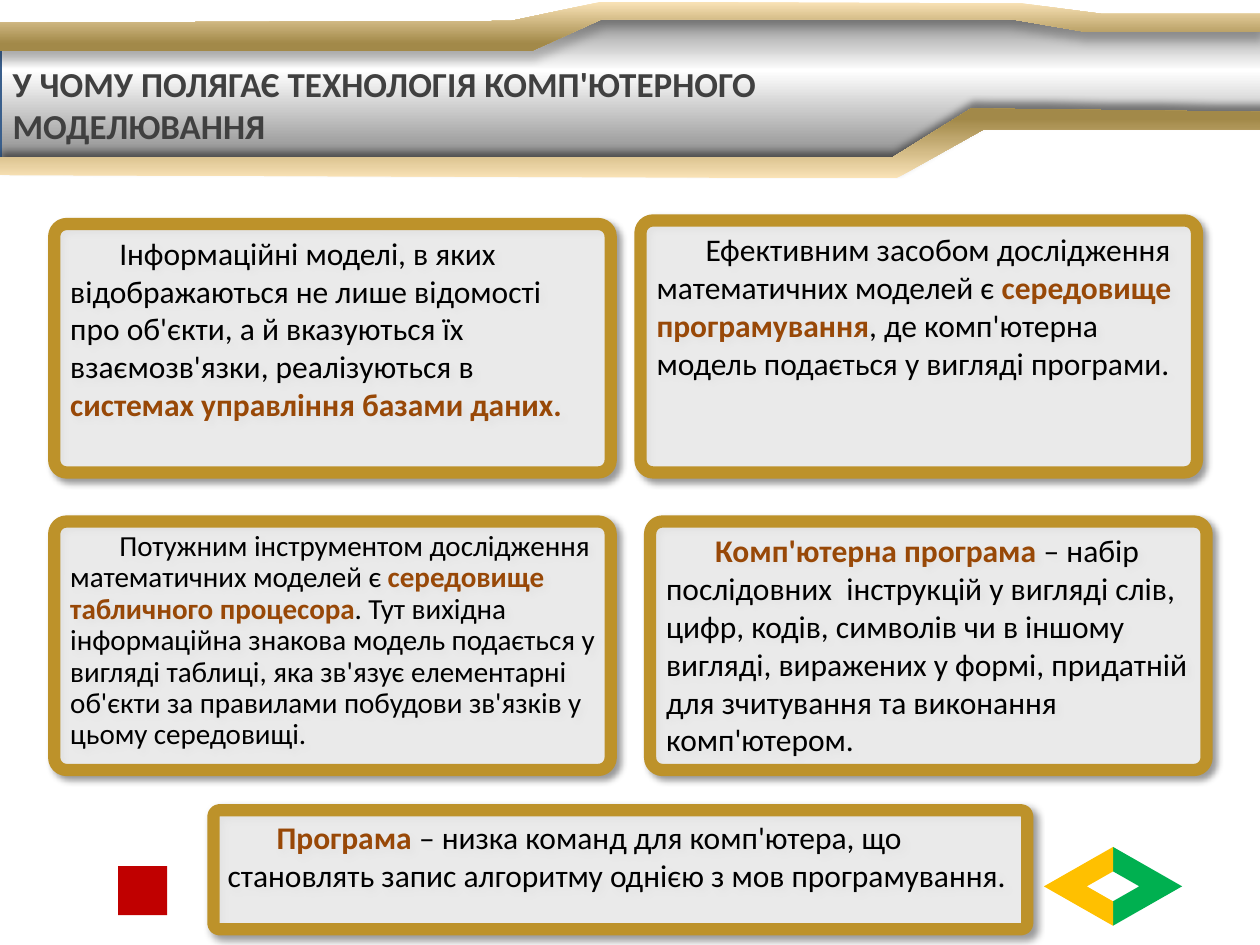
from pptx import Presentation
from pptx.dml.color import RGBColor
from pptx.enum import shapes, text
from pptx.oxml import parse_xml
from pptx.oxml.ns import nsdecls, qn
from pptx.util import Pt

COLORS = {
    "title": "404040", "body": "000000", "accent": "984807",
    "card": "FFFFFF", "border": "BD922A", "outline": "3A5F8C",
    "steel": "7F7F7F", "shine": "FFFFFF", "cream": "FAE3B7", "gold": "A28949",
    "green": "00B050", "amber": "FFC000", "red": "C00000",
}
RGB = {name: RGBColor.from_string(value) for name, value in COLORS.items()}


def write(tf, runs, size=18, indent=0, spacing=None, anchor=text.MSO_ANCHOR.TOP):
    """Fill a frame with one paragraph of (text, colour name, bold) runs."""
    tf.word_wrap = True
    tf.auto_size = text.MSO_AUTO_SIZE.NONE
    tf.vertical_anchor = anchor
    p = tf.paragraphs[0]
    p.alignment = text.PP_ALIGN.LEFT
    p.space_before = Pt(0)
    if spacing:
        p.line_spacing = spacing
    p._p.get_or_add_pPr().set("indent", str(Pt(indent)))
    for content, color, bold in runs:
        r = p.add_run()
        r.text = content
        r.font.name = "Calibri"
        r.font.size = Pt(size)
        r.font.bold = bold
        r.font.color.rgb = RGB[color]


def add_shadow(shape, alpha, blur, distance, angle):
    shape.shadow.inherit = False
    shape._element.spPr.find(qn("a:effectLst")).append(parse_xml(
        f'<a:outerShdw {nsdecls("a")} blurRad="{Pt(blur)}" dist="{Pt(distance)}" '
        f'dir="{angle * 60000}" algn="ctr" rotWithShape="0"><a:srgbClr val="000000">'
        f'<a:alpha val="{alpha * 1000}"/></a:srgbClr></a:outerShdw>'))


prs = Presentation()
prs.slide_width, prs.slide_height = Pt(720), Pt(540)
s = prs.slides.add_slide(prs.slide_layouts[5])

title = s.shapes.title
title.left, title.top, title.width, title.height = Pt(0), Pt(15), Pt(533), Pt(90)
write(title.text_frame,
      [("У ЧОМУ ПОЛЯГАЄ ТЕХНОЛОГІЯ КОМП'ЮТЕРНОГО МОДЕЛЮВАННЯ", "title", True)],
      size=20, anchor=text.MSO_ANCHOR.MIDDLE)

# Header: steel band behind the title, gold strips above and below it
steel_stops = [(0, "steel"), (38, "shine"), (100, "steel")]
gold_stops = [(0, "cream"), (85, "gold")]
header = [
    ([(0, 23), (291.5, 23), (345.5, 6), (581, 6), (631.5, 9.5), (721, 9.5),
      (721.5, 67), (553, 65.5), (509, 96), (0, 96)], steel_stops, 90, None),
    ([(-2, 29), (304.5, 29), (344, 11), (577.5, 11), (619, 18.5), (719.5, 18.5),
      (720, 8.5), (629.5, 8.5), (584.5, 1.5), (343.5, 1), (291.5, 12), (-2, 13)],
     gold_stops, 90, (19, 4, 5, 90)),
    ([(0, 90), (510.5, 90.5), (555, 62.5), (725, 64), (722, 73.5), (562.5, 73.5),
      (512.5, 101.5), (0.5, 99.5)], gold_stops, 270, (43, 4, 4, 280)),
]
for points, stops, angle, shadow in header:
    builder = s.shapes.build_freeform(*points[0], scale=Pt(1))
    builder.add_line_segments(points[1:], close=True)
    sp = builder.convert_to_shape()
    sp.fill.solid()
    stop_xml = "".join(
        f'<a:gs pos="{pos * 1000}"><a:srgbClr val="{COLORS[color]}"/></a:gs>'
        for pos, color in stops)
    sp_pr = sp._element.spPr
    sp_pr.replace(sp_pr.find(qn("a:solidFill")), parse_xml(
        f'<a:gradFill {nsdecls("a")} rotWithShape="1"><a:gsLst>{stop_xml}</a:gsLst>'
        f'<a:lin ang="{angle * 60000}" scaled="0"/></a:gradFill>'))
    if shadow:
        sp.line.fill.background()
        add_shadow(sp, *shadow)
    else:
        sp.line.color.rgb = RGB["outline"]
        sp.line.width = Pt(2)
        sp.shadow.inherit = False
        title._element.addprevious(sp._element)

# Navigation marks
marks = [
    (shapes.MSO_SHAPE.NOTCHED_RIGHT_ARROW, (636, 484, 39.5, 45), 0, "green"),
    (shapes.MSO_SHAPE.NOTCHED_RIGHT_ARROW, (596.5, 484, 39.5, 45), 180, "amber"),
    (shapes.MSO_SHAPE.RECTANGLE, (67.5, 495, 28, 28), 0, "red"),
]
for kind, box, rotation, color in marks:
    sp = s.shapes.add_shape(kind, *map(Pt, box))
    if kind == shapes.MSO_SHAPE.NOTCHED_RIGHT_ARROW:
        sp.adjustments[0], sp.adjustments[1] = 0.38, 1.25
    sp.rotation = rotation
    sp.fill.solid()
    sp.fill.fore_color.rgb = RGB[color]
    sp.line.fill.background()
    sp.shadow.inherit = False

# Text cards: box, font size, line spacing, runs
cards = [
    ((31, 128, 318, 142), 18, None, [
        ("Інформаційні моделі, в яких відображаються не лише відомості про об'єкти, "
         "а й вказуються їх взаємозв'язки, реалізуються в ", "body", False),
        ("системах управління базами даних.", "accent", True)]),
    ((366, 126, 318, 144), 18, None, [
        ("Ефективним засобом дослідження математичних моделей є ", "body", False),
        ("середовище програмування", "accent", True),
        (", де комп'ютерна модель подається у вигляді програми.", "body", False)]),
    ((31, 298, 318, 142), 16.6, 0.9, [
        ("Потужним інструментом дослідження математичних моделей є ", "body", False),
        ("середовище табличного процесора", "accent", True),
        (". Тут вихідна інформаційна знакова модель подається у вигляді таблиці, "
         "яка зв'язує елементарні об'єкти за правилами побудови зв'язків у цьому "
         "середовищі.", "body", False)]),
    ((371.5, 298, 318, 142), 18, None, [
        ("Комп'ютерна програма ", "accent", True),
        ("– набір послідовних  інструкцій у вигляді слів, цифр, кодів, символів чи "
         "в іншому вигляді, виражених у формі, придатній для зчитування та виконання "
         "комп'ютером.", "body", False)]),
    ((122, 463, 465, 68), 18, None, [
        ("Програма", "accent", True),
        (" – низка команд для комп'ютера, що становлять запис алгоритму однією "
         "з мов програмування.", "body", False)]),
]
for box, size, spacing, runs in cards:
    sp = s.shapes.add_shape(shapes.MSO_SHAPE.ROUNDED_RECTANGLE, *map(Pt, box))
    sp.adjustments[0] = 0.05
    sp.fill.solid()
    sp.fill.fore_color.rgb = RGB["card"]
    fill_color = sp._element.spPr.find(qn("a:solidFill"))[0]
    fill_color.append(parse_xml(f'<a:alpha {nsdecls("a")} val="72000"/>'))
    sp.line.color.rgb = RGB["border"]
    sp.line.width = Pt(7)
    add_shadow(sp, 40, 4, 3, 45)
    write(sp.text_frame, runs, size=size, indent=28, spacing=spacing)

prs.save("out.pptx")
